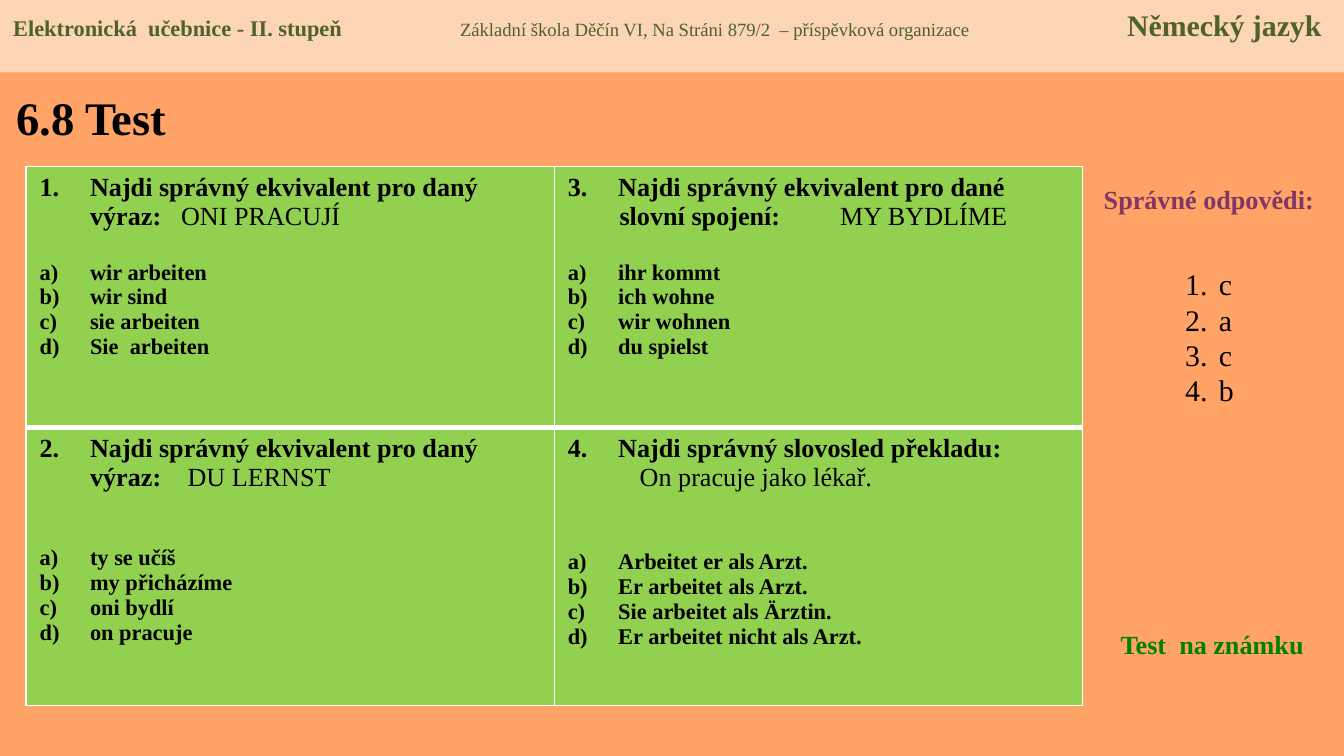
from dataclasses import dataclass

from lxml import etree
from pptx import Presentation
from pptx import util as u
from pptx.dml.color import RGBColor
from pptx.enum import shapes, text
from pptx.oxml import ns


@dataclass(frozen=True)
class Theme:
    font: str = "Times New Roman"
    background: str = "FFA366"
    band: str = "FCD5B5"
    band_ink: str = "4F6228"
    cell: str = "92D050"
    border: str = "FFFFFF"
    ink: str = "000000"
    key_ink: str = "813763"
    grade_ink: str = "008000"
    title: int = 25
    large: int = 16
    question: int = 14
    option: int = 12
    small: int = 10


COLUMNS, ROWS = 100, 56.25
UNIT = u.Inches(0.1)
LETTERS, NUMBERS = "alphaLcParenR", "arabicPeriod"


def grid(*cells):
    return [round(cell * UNIT) for cell in cells]


def child(parent, tag, **attributes):
    return etree.SubElement(parent, ns.qn(tag), attributes)


class Sheet:
    """Holds the theme and the current slide; lengths are grid units."""

    def __init__(self, deck, theme):
        self.theme = theme
        self.slide = deck.slides.add_slide(deck.slide_layouts[5])
        self.paint(self.slide.background.fill, theme.background)

    def paint(self, fill, color):
        fill.solid()
        fill.fore_color.rgb = RGBColor.from_string(color)

    def run(self, paragraph, words, size, color=None, bold=False):
        run = paragraph.add_run()
        run.text = words
        font = run.font
        font.name, font.size, font.bold = self.theme.font, u.Pt(size), bold
        font.color.rgb = RGBColor.from_string(color or self.theme.ink)
        return run

    def gap(self, paragraph, points):
        """Add one space widened to the given width."""
        space = self.run(paragraph, " ", self.theme.question, bold=True)
        extra = points - self.theme.question / 4
        space.font._element.set("spc", str(round(extra * 100)))

    def number(self, paragraph, scheme, indent, start=1):
        props = paragraph._p.get_or_add_pPr()
        props.set("marL", str(round(indent * UNIT)))
        props.set("indent", str(round(-indent * UNIT)))
        child(props, "a:buFont", typeface=self.theme.font)
        child(props, "a:buAutoNum", type=scheme, startAt=str(start))

    def title(self, words, *place):
        holder = self.slide.shapes.title
        holder.left, holder.top, holder.width, holder.height = grid(*place)
        frame = holder.text_frame
        frame.auto_size = text.MSO_AUTO_SIZE.NONE
        frame.vertical_anchor = text.MSO_ANCHOR.MIDDLE
        frame.paragraphs[0].alignment = text.PP_ALIGN.LEFT
        self.run(frame.paragraphs[0], words, self.theme.title, bold=True)

    def box(self, *place):
        frame = self.slide.shapes.add_textbox(*grid(*place)).text_frame
        frame.word_wrap = True
        return frame

    def label(self, words, color, *place, align=text.PP_ALIGN.LEFT):
        line = self.box(*place).paragraphs[0]
        line.alignment = align
        self.run(line, words, self.theme.question, color, True)

    def answer_key(self, answers, *place):
        frame = self.box(*place)
        frame.margin_top = round(3.3 * UNIT)
        for index, answer in enumerate(answers):
            line = frame.add_paragraph() if index else frame.paragraphs[0]
            line.line_spacing = u.Pt(19)
            self.number(line, NUMBERS, 2.5)
            self.run(line, answer, self.theme.large)

    def band(self, parts, stops, *place):
        """Draw the header; parts are separated by tab stops."""
        bar = self.slide.shapes.add_shape(
            shapes.MSO_SHAPE.RECTANGLE, *grid(*place))
        bar.shadow.inherit = False
        self.paint(bar.fill, self.theme.band)
        bar.line.fill.background()
        bar.text_frame.vertical_anchor = text.MSO_ANCHOR.TOP
        line = bar.text_frame.paragraphs[0]
        line.alignment = text.PP_ALIGN.LEFT
        tabs = child(line._p.get_or_add_pPr(), "a:tabLst")
        for position, side in stops:
            child(tabs, "a:tab", pos=str(round(position * UNIT)), algn=side)
        for index, (words, size, bold) in enumerate(parts):
            lead = "\t" if index else ""
            self.run(line, lead + words, size, self.theme.band_ink, bold)

    def borders(self, cell, **widths):
        props = cell._tc.get_or_add_tcPr()
        for index, side in enumerate("LRTB"):
            width = u.Pt(widths.get(side, 1))
            edge = etree.Element(ns.qn(f"a:ln{side}"), w=str(int(width)))
            fill = child(edge, "a:solidFill")
            child(fill, "a:srgbClr", val=self.theme.border)
            props.insert(index, edge)

    def question(self, cell, number, prompt, options):
        frame = cell.text_frame
        line = frame.paragraphs[0]
        self.number(line, NUMBERS, 3.75, number)
        self.run(line, prompt["ask"], self.theme.question, bold=True)
        if "indent" in prompt:
            line = frame.add_paragraph()
            margin = round(prompt["indent"] * UNIT)
            line._p.get_or_add_pPr().set("marL", str(margin))
        if "lead" in prompt:
            self.run(line, prompt["lead"], self.theme.question, bold=True)
        if "gap" in prompt:
            self.gap(line, prompt["gap"])
        self.run(line, prompt["phrase"], self.theme.question)
        for index, option in enumerate(options):
            line = frame.add_paragraph()
            line.space_before = u.Pt(0 if index else prompt["space"])
            self.number(line, LETTERS, 3.75)
            self.run(line, option, self.theme.option, bold=True)

    def quiz(self, questions, left, top, column, heights):
        """Fill a two-column table, going down each column in turn."""
        place = grid(left, top, 2 * column, sum(heights))
        table = self.slide.shapes.add_table(len(heights), 2, *place).table
        table.first_row = table.horz_banding = False
        for row, height in zip(table.rows, grid(*heights)):
            row.height = height
        for index, (prompt, options) in enumerate(questions):
            col, row = divmod(index, len(heights))
            cell = table.cell(row, col)
            self.paint(cell.fill, self.theme.cell)
            self.borders(cell, **({"T": 3} if row else {"B": 3}))
            self.question(cell, index + 1, prompt, options)


QUESTIONS = [
    (dict(ask="Najdi správný ekvivalent pro daný výraz:", gap=10.5,
          phrase="ONI PRACUJÍ", space=15.5),
     ["wir arbeiten", "wir sind", "sie arbeiten", "Sie  arbeiten"]),
    (dict(ask="Najdi správný ekvivalent pro daný výraz:", gap=14,
          phrase="DU LERNST", space=29),
     ["ty se učíš", "my přicházíme", "oni bydlí", "on pracuje"]),
    (dict(ask="Najdi správný ekvivalent pro dané", indent=3.85,
          lead="slovní spojení:", gap=32, phrase="MY BYDLÍME", space=15.5),
     ["ihr kommt", "ich wohne", "wir wohnen", "du spielst"]),
    (dict(ask="Najdi správný slovosled překladu:", indent=5.35,
          phrase="On pracuje jako lékař.", space=31),
     ["Arbeitet er als Arzt.", "Er arbeitet als Arzt.",
      "Sie arbeitet als Ärztin.", "Er arbeitet nicht als Arzt."]),
]


def main():
    deck = Presentation()
    deck.slide_width, deck.slide_height = grid(COLUMNS, ROWS)
    theme = Theme()
    sheet = Sheet(deck, theme)
    sheet.title("6.8 Test", 0.2, 5.45, 31.9, 6.5)
    sheet.label("Správné odpovědi:", theme.key_ink, 80.5, 13.15, 18.9, 3.4,
                align=text.PP_ALIGN.CENTER)
    sheet.answer_key("cacb", 87.2, 16.5, 5.5, 19.9)
    sheet.label("Test  na známku", theme.grade_ink, 82.4, 46.3, 15.7, 3.4)
    sheet.quiz(QUESTIONS, 1.95, 12.4, 39.3, (19.4, 20.7))
    sheet.band(
        [("Elektronická  učebnice - II. stupeň", theme.option, True),
         ("Základní škola Děčín VI, Na Stráni 879/2  – příspěvková organizace",
          theme.small, False),
         ("Německý jazyk", theme.large, True)],
        [(33.25, "l"), (97.35, "r")], 0, 0, COLUMNS, 5.4)
    deck.save("out.pptx")


if __name__ == "__main__":
    main()
